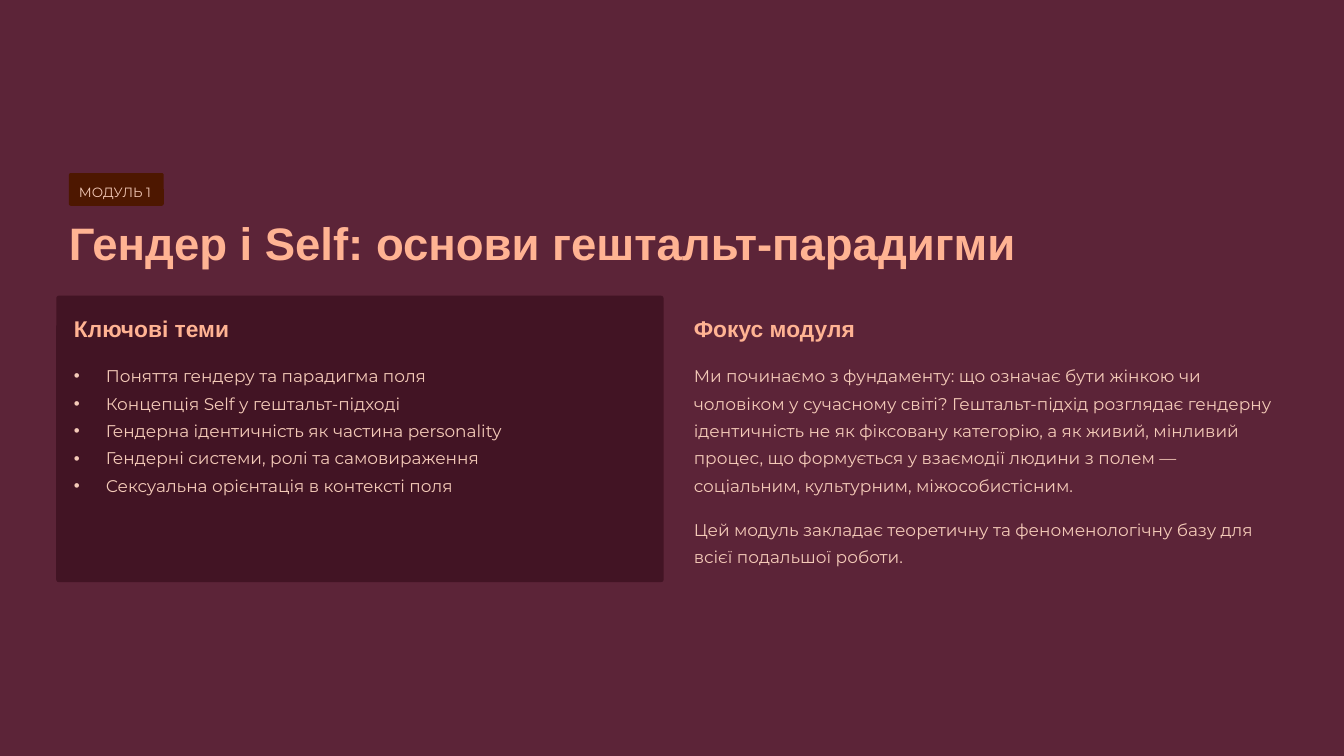
from pptx import Presentation
from pptx.dml.color import RGBColor as RGB
from pptx.enum.shapes import MSO_SHAPE as SHAPE
from pptx.oxml.ns import qn
from pptx.util import Inches, Pt
from lxml.etree import SubElement

COLORS = {
    "background": "5C2438",
    "badge": "4D1700",
    "panel": "421424",
    "heading": "FFB393",
    "body": "F4CAB8",
}
STYLES = {
    "badge": ("Montserrat", 11.5, 18.5, "body", False),
    "title": ("Arial", 39, 49, "heading", True),
    "heading": ("Arial", 19.5, 24.5, "heading", True),
    "body": ("Montserrat", 14.5, 23.5, "body", False),
}
TOPICS = [
    "Поняття гендеру та парадигма поля",
    "Концепція Self у гештальт-підході",
    "Гендерна ідентичність як частина personality",
    "Гендерні системи, ролі та самовираження",
    "Сексуальна орієнтація в контексті поля",
]
FOCUS = (
    "Ми починаємо з фундаменту: що означає бути жінкою чи чоловіком у сучасному світі? "
    "Гештальт-підхід розглядає гендерну ідентичність не як фіксовану категорію, "
    "а як живий, мінливий процес, що формується у взаємодії людини з полем — "
    "соціальним, культурним, міжособистісним."
)
PURPOSE = (
    "Цей модуль закладає теоретичну та феноменологічну базу "
    "для всієї подальшої роботи."
)
LEFT, RIGHT = 0.88, 8.26
HEADING_TOP, BODY_TOP = 3.73, 4.27


class ModuleSlide:
    """Draws styled elements on the current slide."""

    def __init__(self, prs):
        self.slide = prs.slides.add_slide(prs.slide_layouts[6])
        fill = self.slide.background.fill
        fill.solid()
        fill.fore_color.rgb = RGB.from_string(COLORS["background"])

    def card(self, x, y, w, h, color, radius):
        sp = self.slide.shapes.add_shape(
            SHAPE.ROUNDED_RECTANGLE, Inches(x), Inches(y), Inches(w), Inches(h))
        sp.adjustments[0] = radius
        sp.shadow.inherit = False
        sp.fill.solid()
        sp.fill.fore_color.rgb = RGB.from_string(COLORS[color])
        sp.line.fill.background()

    def text(self, x, y, w, h, lines, style, wrap=False, bullets=False):
        font, size, leading, color, bold = STYLES[style]
        sp = self.slide.shapes.add_textbox(Inches(x), Inches(y), Inches(w), Inches(h))
        tf = sp.text_frame
        tf.word_wrap = wrap
        tf.margin_left = tf.margin_right = tf.margin_top = tf.margin_bottom = 0
        for i, line in enumerate(lines):
            p = tf.paragraphs[0] if i == 0 else tf.add_paragraph()
            p.line_spacing = Pt(leading)
            if bullets:
                self.bullet(p)
            r = p.add_run()
            r.text = line
            r.font.name = font
            r.font.size = Pt(size)
            r.font.bold = bold
            r.font.color.rgb = RGB.from_string(COLORS[color])

    def bullet(self, p):
        pPr = p._p.get_or_add_pPr()
        pPr.set("marL", str(Inches(0.38)))
        pPr.set("indent", str(-Inches(0.38)))
        SubElement(pPr, qn("a:buFont"), typeface="Arial")
        SubElement(pPr, qn("a:buChar"), char="•")


def main():
    prs = Presentation()
    prs.slide_width, prs.slide_height = Inches(16), Inches(9)
    s = ModuleSlide(prs)
    s.card(0.82, 2.06, 1.13, 0.39, "badge", 0.064)
    s.text(0.94, 2.13, 0.89, 0.26, ["МОДУЛЬ 1"], "badge")
    s.text(0.82, 2.53, 11.35, 0.68, ["Гендер і Self: основи гештальт-парадигми"], "title")
    s.card(0.67, 3.52, 7.23, 3.41, "panel", 0.009)
    for x, heading in ((LEFT, "Ключові теми"), (RIGHT, "Фокус модуля")):
        s.text(x, HEADING_TOP, 2.73, 0.34, [heading], "heading")
    s.text(LEFT, BODY_TOP, 6.82, 1.92, TOPICS, "body", wrap=True, bullets=True)
    s.text(RIGHT, BODY_TOP, 6.93, 1.64, [FOCUS], "body", wrap=True)
    s.text(RIGHT, 6.1, 6.93, 0.66, [PURPOSE], "body", wrap=True)
    prs.save("out.pptx")


if __name__ == "__main__":
    main()
